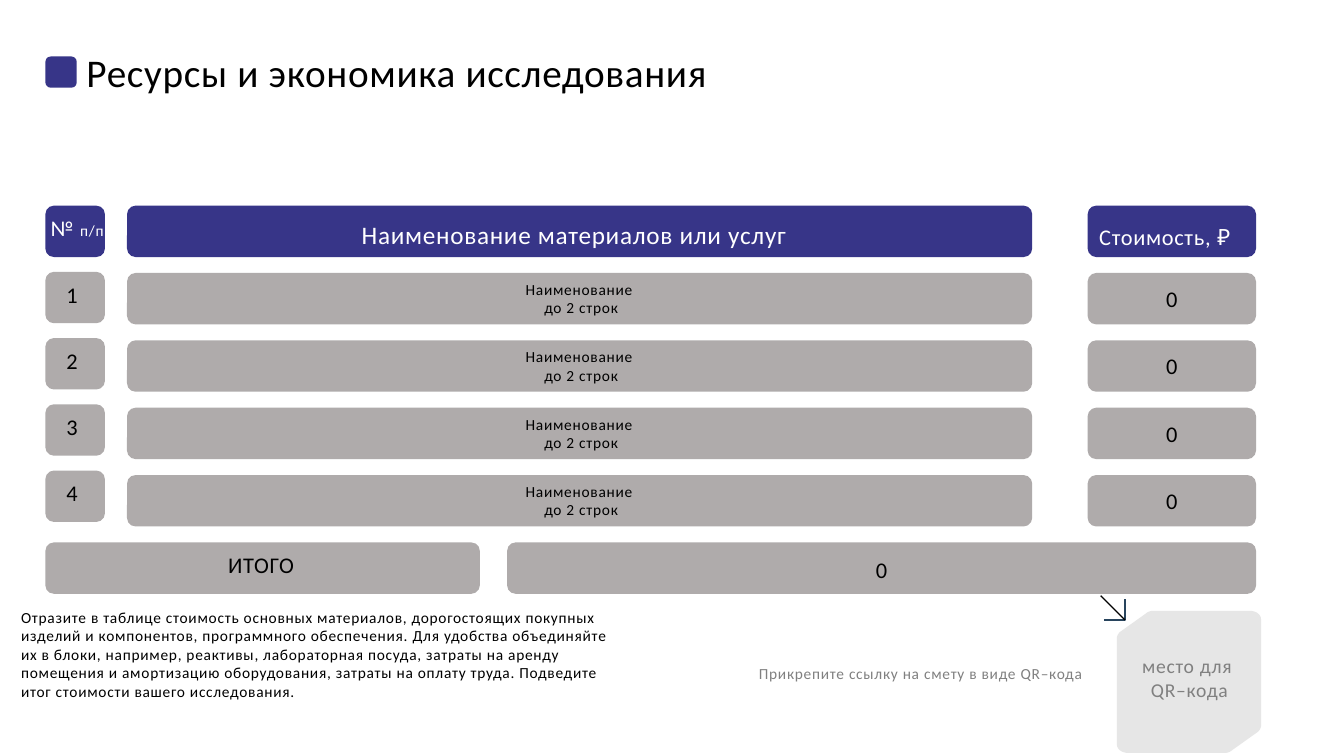
from dataclasses import dataclass

from lxml.etree import SubElement
from pptx import Presentation
from pptx.dml.color import RGBColor
from pptx.enum.shapes import MSO_CONNECTOR, MSO_SHAPE
from pptx.enum.text import MSO_AUTO_SIZE, PP_ALIGN
from pptx.oxml.ns import qn
from pptx.shapes.autoshape import Shape
from pptx.slide import Slide
from pptx.util import Inches, Pt

WIDTH, HEIGHT = Inches(13.33), Inches(7.5)
FONT = "Calibri"
COLORS = {
    "accent": "373588",
    "card": "AFABAB",
    "code": "E6E6E6",
    "ink": "000000",
    "muted": "808080",
    "barb": "28445D",
    "light": "FFFFFF",
}
# All lengths are percentages of the slide's width or height.
HEADER_TOP, ROW_PITCH, ROW_HEIGHT = 27.2, 8.91, 6.8
LINE_HEIGHT = 4.93
ITEM_COUNT = 4

Point = tuple[float, float]


@dataclass(frozen=True)
class Box:
    left: float
    top: float
    width: float
    height: float

    def emu(self) -> tuple[int, int, int, int]:
        return (across(self.left), down(self.top),
                across(self.width), down(self.height))


@dataclass(frozen=True)
class Label:
    """Text area of a cell; drop is its distance below the row's top."""
    left: float
    width: float
    drop: float
    height: float = LINE_HEIGHT
    size: float = 16


@dataclass(frozen=True)
class Column:
    left: float
    width: float
    header: str
    header_label: Label
    item: str
    item_label: Label
    pitch: float = ROW_PITCH


@dataclass(frozen=True)
class Total:
    left: float
    width: float
    content: str
    label: Label


COLUMNS = [
    Column(3.38, 4.43, "№ п/п", Label(2.78, 5.93, 0.4),
           "{number}", Label(3.38, 3.98, 0.53), pitch=8.76),
    Column(9.45, 67.35, "Наименование материалов или услуг",
           Label(10.28, 64.88, 1.2, 5.33, 18),
           "Наименование \nдо 2 строк", Label(11.33, 63.83, 0.27, 6.27, 11)),
    Column(80.93, 12.53, "Стоимость, ₽", Label(80.4, 12.53, 1.6),
           "0", Label(80.93, 12.53, 0.93)),
]
TOTALS = [
    Total(3.38, 32.33, "ИТОГО", Label(4.05, 30.75, 0.53)),
    Total(37.73, 55.73, "0", Label(37.73, 55.73, 1.2)),
]
GUIDANCE = (
    "Отразите в таблице стоимость основных материалов, дорогостоящих покупных "
    "изделий и компонентов, программного обеспечения. Для удобства объединяйте "
    "их в блоки, например, реактивы, лабораторная посуда, затраты на аренду "
    "помещения и амортизацию оборудования, затраты на оплату труда. Подведите "
    "итог стоимости вашего исследования."
)
CODE_TILE = Box(83.1, 80.8, 10.73, 18.8)
# Rounded corners of half the tile, as Bezier control points in shares of it.
HALF_TILE: list[list[Point]] = [
    [(1, 0.81), (1, 0.82), (0.99, 0.84), (0.98, 0.85)],
    [(0.8, 0.98), (0.79, 0.99), (0.77, 1), (0.75, 1)],
    [(0.08, 1), (0.03, 1), (0, 0.97), (0, 0.94)],
]


def across(share: float) -> int:
    return round(WIDTH * share / 100)


def down(share: float) -> int:
    return round(HEIGHT * share / 100)


def rgb(name: str) -> RGBColor:
    return RGBColor.from_string(COLORS[name])


def fill_plain(shape: Shape, color: str) -> None:
    shape.shadow.inherit = False
    shape.fill.solid()
    shape.fill.fore_color.rgb = rgb(color)
    shape.line.fill.background()


def add_card(slide: Slide, box: Box, color: str,
             outline: MSO_SHAPE = MSO_SHAPE.FLOWCHART_ALTERNATE_PROCESS) -> None:
    fill_plain(slide.shapes.add_shape(outline, *box.emu()), color)


def add_text(slide: Slide, box: Box, content: str, *, size: float = 11,
             color: str = "ink", align: PP_ALIGN = PP_ALIGN.LEFT,
             wrap: bool = True, small_tail: str = "") -> None:
    """Write one paragraph per line; small_tail ends the last one at 11 pt."""
    frame = slide.shapes.add_textbox(*box.emu()).text_frame
    frame.word_wrap = wrap
    frame.auto_size = MSO_AUTO_SIZE.SHAPE_TO_FIT_TEXT
    frame.text = content
    if small_tail:
        frame.paragraphs[-1].add_run().text = small_tail
    for paragraph in frame.paragraphs:
        paragraph.alignment = align
        for run in paragraph.runs:
            run.font.name = FONT
            run.font.size = Pt(11 if run.text == small_tail else size)
            run.font.color.rgb = rgb(color)
            run.font._element.set("spc", "50")


def add_label(slide: Slide, label: Label, row_top: float, content: str,
              color: str = "ink", small_tail: str = "") -> None:
    box = Box(label.left, row_top + label.drop, label.width, label.height)
    add_text(slide, box, content, size=label.size, color=color,
             align=PP_ALIGN.CENTER, small_tail=small_tail)


def add_column(slide: Slide, column: Column) -> None:
    for number in range(ITEM_COUNT + 1):
        top = HEADER_TOP + number * column.pitch
        card = Box(column.left, top, column.width, ROW_HEIGHT)
        if number:
            add_card(slide, card, "card")
            add_label(slide, column.item_label, top,
                      column.item.format(number=number))
        else:
            add_card(slide, card, "accent")
            lead, sign, unit = column.header.partition("п/п")
            add_label(slide, column.header_label, top, lead, "light",
                      sign + unit)


def add_total(slide: Slide, total: Total) -> None:
    top = HEADER_TOP + (ITEM_COUNT + 1) * ROW_PITCH
    add_card(slide, Box(total.left, top, total.width, ROW_HEIGHT), "card")
    add_label(slide, total.label, top, total.content)


def bezier(controls: list[Point], steps: int = 8) -> list[Point]:
    weights = [((1 - t) ** 3, 3 * t * (1 - t) ** 2, 3 * t * t * (1 - t), t ** 3)
               for t in (step / steps for step in range(steps + 1))]
    return [(sum(w * x for w, (x, _) in zip(row, controls)),
             sum(w * y for w, (_, y) in zip(row, controls))) for row in weights]


def add_outline(slide: Slide, points: list[Point], close: bool) -> Shape:
    (left, top), *rest = [(across(x), down(y)) for x, y in points]
    builder = slide.shapes.build_freeform(left, top)
    builder.add_line_segments(rest, close=close)
    return builder.convert_to_shape()


def add_code_tile(slide: Slide) -> None:
    half = [point for corner in HALF_TILE for point in bezier(corner)]
    turned = [(1 - x, 1 - y) for x, y in half]
    points = [(CODE_TILE.left + x * CODE_TILE.width,
               CODE_TILE.top + y * CODE_TILE.height) for x, y in half + turned]
    fill_plain(add_outline(slide, points, close=True), "code")
    add_text(slide, Box(82.35, 85.87, 12.3, 7.6), "место для \nQR–кода",
             size=14, color="muted", align=PP_ALIGN.CENTER)


def add_arrow(slide: Slide, start: Point, tip: Point, barb: Point) -> None:
    head = add_outline(slide, [(barb[0], tip[1]), tip, (tip[0], barb[1])], False)
    head.shadow.inherit = False
    head.fill.background()
    shaft = slide.shapes.add_connector(
        MSO_CONNECTOR.STRAIGHT, across(start[0]), down(start[1]),
        across(tip[0]), down(tip[1]))
    for part, color in ((head, "barb"), (shaft, "ink")):
        part.line.color.rgb = rgb(color)
        part.line.width = Pt(1)
    SubElement(shaft._element.spPr, qn("a:effectLst"))


def main() -> None:
    deck = Presentation()
    deck.slide_width, deck.slide_height = WIDTH, HEIGHT
    slide = deck.slides.add_slide(deck.slide_layouts[6])
    add_card(slide, Box(3.38, 7.47, 2.33, 4.13), "accent",
             MSO_SHAPE.ROUNDED_RECTANGLE)
    add_text(slide, Box(5.7, 5.73, 48.23, 7.6),
             "Ресурсы и экономика исследования", size=28, wrap=False)
    for column in COLUMNS:
        add_column(slide, column)
    for total in TOTALS:
        add_total(slide, total)
    add_text(slide, Box(0.83, 79.73, 45.23, 13.73), GUIDANCE)
    add_text(slide, Box(55.73, 87.2, 26.63, 3.87),
             "Прикрепите ссылку на смету в виде QR–кода", color="muted")
    add_code_tile(slide)
    add_arrow(slide, start=(81.9, 78.8), tip=(83.7, 82), barb=(82.13, 79.2))
    deck.save("out.pptx")


if __name__ == "__main__":
    main()
